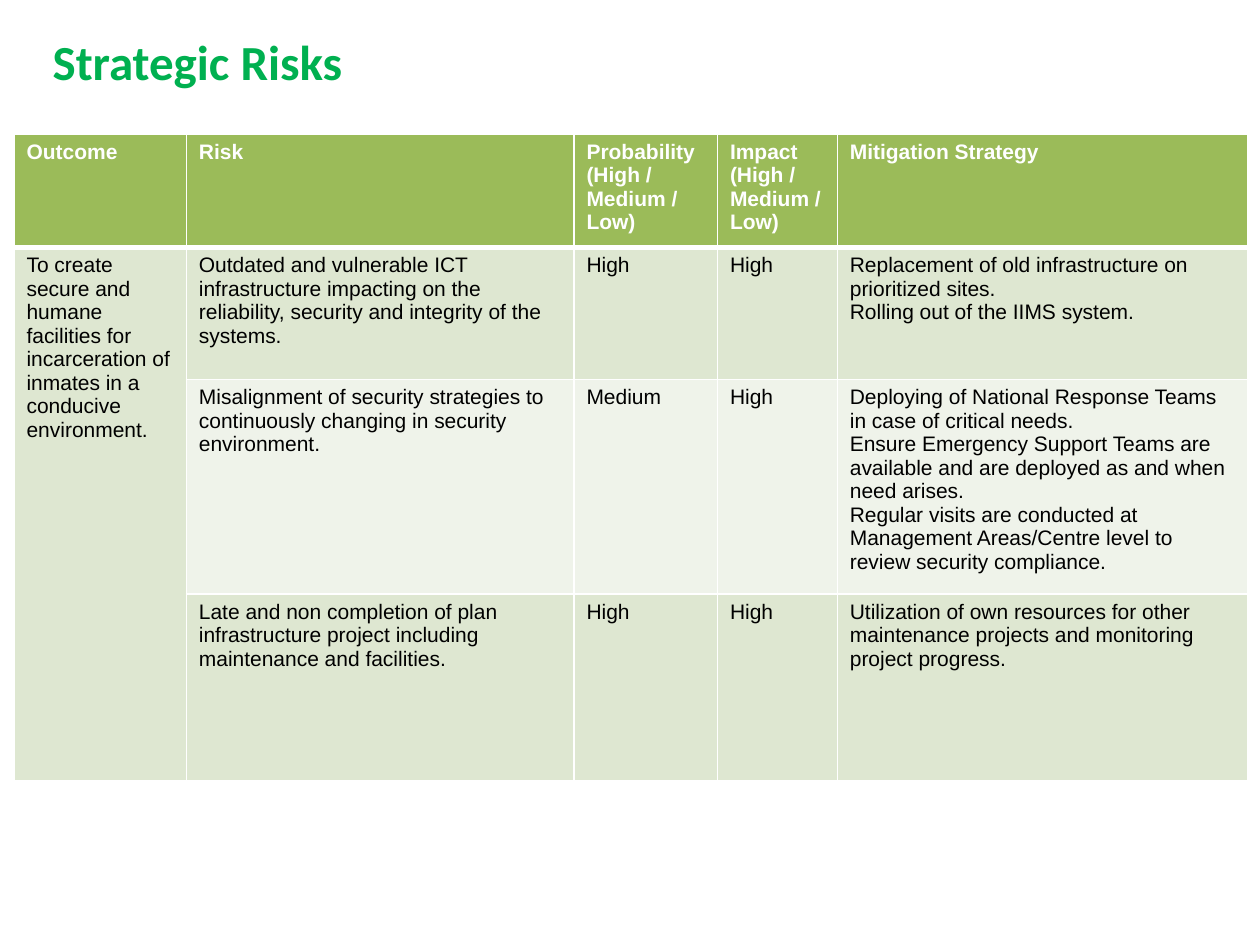
from lxml.etree import SubElement
from pptx import Presentation
from pptx.dml.color import RGBColor
from pptx.oxml.ns import qn
from pptx.util import Pt

COLORS = {
    "title": "00B050",
    "header": "9BBB59",
    "band_dark": "DEE7D1",
    "band_light": "EFF3EA",
    "white": "FFFFFF",
    "black": "000000",
}

TITLE = "Strategic Risks"
HEADINGS = [
    "Outcome",
    "Risk",
    "Probability (High / Medium / Low)",
    "Impact (High / Medium / Low)",
    "Mitigation Strategy",
]
OUTCOME = (
    "To create secure and humane facilities for incarceration of inmates "
    "in a conducive environment."
)
RISKS = [
    (
        "Outdated and vulnerable ICT infrastructure impacting on the "
        "reliability, security and integrity of the systems.",
        "High",
        "High",
        "Replacement of old infrastructure on prioritized sites.\n"
        "Rolling out of the IIMS system.",
    ),
    (
        "Misalignment of security strategies to continuously changing in "
        "security environment.",
        "Medium",
        "High",
        "Deploying of National Response Teams in case of critical needs.\n"
        "Ensure Emergency Support Teams are available and are deployed as "
        "and when need arises.\n"
        "Regular visits are conducted at Management Areas/Centre level to "
        "review security compliance.",
    ),
    (
        "Late and non completion of plan infrastructure project including "
        "maintenance and facilities.",
        "High",
        "High",
        "Utilization of own resources for other maintenance projects and "
        "monitoring project progress.",
    ),
]

COLUMN_WIDTHS = [98.5, 221.5, 82, 68.5, 234.5]
ROW_HEIGHTS = [64.5, 75.5, 122.5, 107.5]
HEADER_RULE, BOTTOM_RULE, THIN_RULE = 3, 2.25, 1


def rgb(name):
    return RGBColor.from_string(COLORS[name])


def style_font(paragraph, family, size, color, bold):
    font = paragraph.font
    font.name, font.size, font.bold = family, Pt(size), bold
    font.color.rgb = rgb(color)


def add_borders(cell, top, bottom):
    """Draw white borders; call before the fill, which must follow them."""
    tc_pr = cell._tc.get_or_add_tcPr()
    widths = {"a:lnL": THIN_RULE, "a:lnR": THIN_RULE, "a:lnT": top, "a:lnB": bottom}
    for tag, width in widths.items():
        line = SubElement(tc_pr, qn(tag), w=str(Pt(width)))
        fill = SubElement(line, qn("a:solidFill"))
        SubElement(fill, qn("a:srgbClr"), val=COLORS["white"])


def add_title(slide):
    box = slide.shapes.add_textbox(Pt(23), Pt(14.5), Pt(680.5), Pt(41))
    box.text_frame.word_wrap = True
    box.text_frame.text = TITLE
    style_font(box.text_frame.paragraphs[0], "Calibri", 28, "title", True)


def add_risk_table(slide):
    rows = [HEADINGS] + [
        (OUTCOME if i == 0 else "", *risk) for i, risk in enumerate(RISKS)
    ]
    last = len(rows) - 1
    table = slide.shapes.add_table(
        len(rows), len(HEADINGS), Pt(8), Pt(76.5),
        Pt(sum(COLUMN_WIDTHS)), Pt(sum(ROW_HEIGHTS)),
    ).table
    for column, width in zip(table.columns, COLUMN_WIDTHS):
        column.width = Pt(width)
    for row, height in zip(table.rows, ROW_HEIGHTS):
        row.height = Pt(height)
    table.cell(1, 0).merge(table.cell(last, 0))

    for r, texts in enumerate(rows):
        is_header = r == 0
        band = "header" if is_header else "band_dark" if r % 2 else "band_light"
        top = HEADER_RULE if r == 1 else THIN_RULE
        for c, text in enumerate(texts):
            cell = table.cell(r, c)
            ends_table = r == last or (c == 0 and not is_header)
            bottom = HEADER_RULE if is_header else BOTTOM_RULE if ends_table else THIN_RULE
            add_borders(cell, top, bottom)
            cell.fill.solid()
            cell.fill.fore_color.rgb = rgb("band_dark" if c == 0 and r else band)
            cell.text = text
            for paragraph in cell.text_frame.paragraphs:
                style_font(paragraph, "Arial", 12, "white" if is_header else "black", is_header)


def main():
    deck = Presentation()
    deck.slide_width, deck.slide_height = Pt(720), Pt(540)
    slide = deck.slides.add_slide(deck.slide_layouts[6])
    add_title(slide)
    add_risk_table(slide)
    deck.save("out.pptx")


if __name__ == "__main__":
    main()
